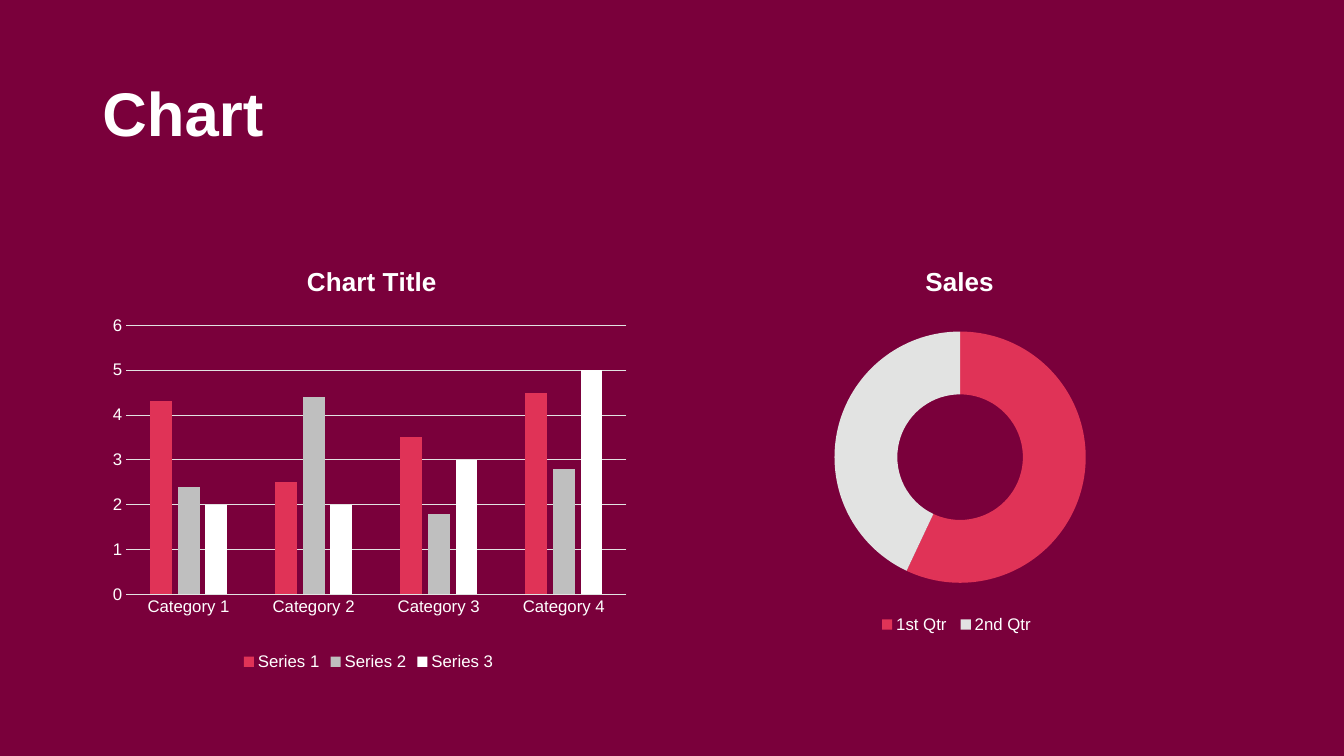
from dataclasses import dataclass

from pptx import Presentation
from pptx.chart.data import CategoryChartData
from pptx.dml.color import RGBColor
from pptx.enum.chart import XL_CHART_TYPE, XL_LEGEND_POSITION, XL_TICK_MARK
from pptx.enum.text import MSO_ANCHOR, PP_ALIGN
from pptx.oxml import parse_xml
from pptx.oxml.ns import nsdecls
from pptx.util import Pt


@dataclass(frozen=True)
class Theme:
    background: RGBColor = RGBColor(0x7A, 0x00, 0x3B)
    text: RGBColor = RGBColor(0xFF, 0xFF, 0xFF)
    accent: RGBColor = RGBColor(0xE0, 0x33, 0x57)
    grey: RGBColor = RGBColor(0xBF, 0xBF, 0xBF)
    pale: RGBColor = RGBColor(0xE2, 0xE3, 0xE2)
    font: str = "Arial"
    title_size: float = 44
    chart_title_size: float = 18.6
    label_size: float = 12
    base_size: float = 10


THEME = Theme()


def style_font(font, size, bold=False):
    font.name = THEME.font
    font.size = Pt(size)
    font.bold = bold
    font.color.rgb = THEME.text


def place_part(chart, tag, left, top, width=None, height=None):
    """Fix a chart part at fractions of the chart area."""
    part = chart.element.xpath(f"c:chart//{tag}")[0]
    for layout in part.xpath("c:layout"):
        part.remove(layout)
    is_plot = tag == "c:plotArea"
    target = '<c:layoutTarget val="inner"/>' if is_plot else ""
    size = f'<c:w val="{width}"/><c:h val="{height}"/>' if width else ""
    layout = parse_xml(
        f'<c:layout {nsdecls("c")}><c:manualLayout>{target}'
        '<c:xMode val="edge"/><c:yMode val="edge"/>'
        f'<c:x val="{left}"/><c:y val="{top}"/>{size}'
        '</c:manualLayout></c:layout>')
    part.insert(0 if is_plot else 1, layout)


def add_styled_chart(slide, box, kind, data, title, title_left):
    """Add a chart with the shared fonts, title and bottom legend."""
    chart = slide.shapes.add_chart(kind, *(Pt(side) for side in box), data).chart
    style_font(chart.font, THEME.base_size)
    chart.has_title = True
    run = chart.chart_title.text_frame.paragraphs[0].add_run()
    run.text = title
    style_font(run.font, THEME.chart_title_size, bold=True)
    place_part(chart, "c:title", title_left, 0.05)
    chart.has_legend = True
    chart.legend.position = XL_LEGEND_POSITION.BOTTOM
    chart.legend.include_in_layout = False
    style_font(chart.legend.font, THEME.label_size)
    return chart


def add_title(slide, box):
    title = slide.shapes.title
    title.left, title.top, title.width, title.height = (Pt(side) for side in box)
    frame = title.text_frame
    frame.word_wrap = True
    frame.vertical_anchor = MSO_ANCHOR.TOP
    paragraph = frame.paragraphs[0]
    paragraph.alignment = PP_ALIGN.LEFT
    paragraph.line_spacing = 0.9
    run = paragraph.add_run()
    run.text = "Chart"
    style_font(run.font, THEME.title_size, bold=True)


def add_column_chart(slide, box):
    data = CategoryChartData()
    data.categories = [f"Category {number}" for number in range(1, 5)]
    data.add_series("Series 1", (4.3, 2.5, 3.5, 4.5))
    data.add_series("Series 2", (2.4, 4.4, 1.8, 2.8))
    data.add_series("Series 3", (2, 2, 3, 5))
    chart = add_styled_chart(
        slide, box, XL_CHART_TYPE.COLUMN_CLUSTERED, data, "Chart Title", 0.38)
    place_part(chart, "c:plotArea", 0.061, 0.2, 0.906, 0.616)

    # Columns
    plot = chart.plots[0]
    plot.vary_by_categories = False
    plot.gap_width = 219
    plot.overlap = -27
    for series, color in zip(plot.series, (THEME.accent, THEME.grey, THEME.text)):
        series.format.fill.solid()
        series.format.fill.fore_color.rgb = color

    # Axes and gridlines
    for axis in (chart.category_axis, chart.value_axis):
        axis.major_tick_mark = axis.minor_tick_mark = XL_TICK_MARK.NONE
        axis.format.line.fill.background()
        style_font(axis.tick_labels.font, THEME.label_size)
    value_axis = chart.value_axis
    value_axis.minimum_scale, value_axis.maximum_scale = 0, 6
    value_axis.major_unit = 1
    value_axis.has_major_gridlines = True
    gridline = value_axis.major_gridlines.format.line
    gridline.color.rgb = THEME.pale
    gridline.width = Pt(0.5)


def add_doughnut_chart(slide, box):
    data = CategoryChartData()
    data.categories = ["1st Qtr", "2nd Qtr"]
    data.add_series("Sales", (57, 43))
    chart = add_styled_chart(
        slide, box, XL_CHART_TYPE.DOUGHNUT, data, "Sales", 0.435)
    place_part(chart, "c:plotArea", 0.279, 0.214, 0.455, 0.576)
    place_part(chart, "c:legend", 0.35, 0.85, 0.3, 0.07)
    chart.element.xpath("c:chart//c:holeSize")[0].set("val", "61")

    # Ring segments
    series = chart.plots[0].series[0]
    for index, color in enumerate((THEME.accent, THEME.pale)):
        segment = series.points[index].format
        segment.fill.solid()
        segment.fill.fore_color.rgb = color
        segment.line.fill.background()


def build_chart_slide(presentation):
    slide = presentation.slides.add_slide(presentation.slide_layouts[5])
    slide.background.fill.solid()
    slide.background.fill.fore_color.rgb = THEME.background
    left, top, width, height = 66, 170, 394.5, 312
    column_step = 420
    add_title(slide, (left, 56, 703.5, 104.5))
    add_column_chart(slide, (left, top, width, height))
    add_doughnut_chart(slide, (left + column_step, top, width, height))


def main():
    presentation = Presentation()
    presentation.slide_width = Pt(960)
    presentation.slide_height = Pt(540)
    build_chart_slide(presentation)
    presentation.save("out.pptx")


if __name__ == "__main__":
    main()
